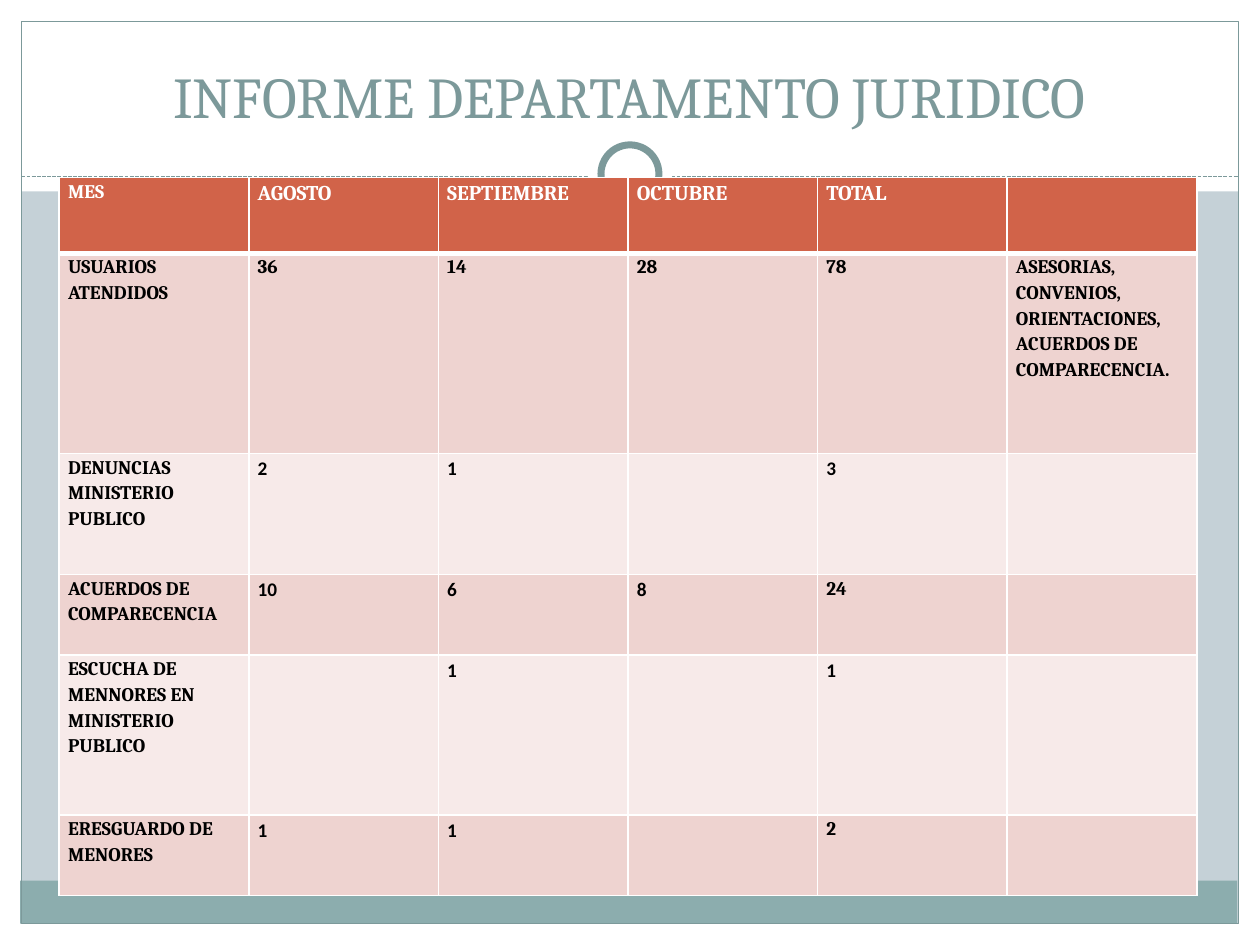
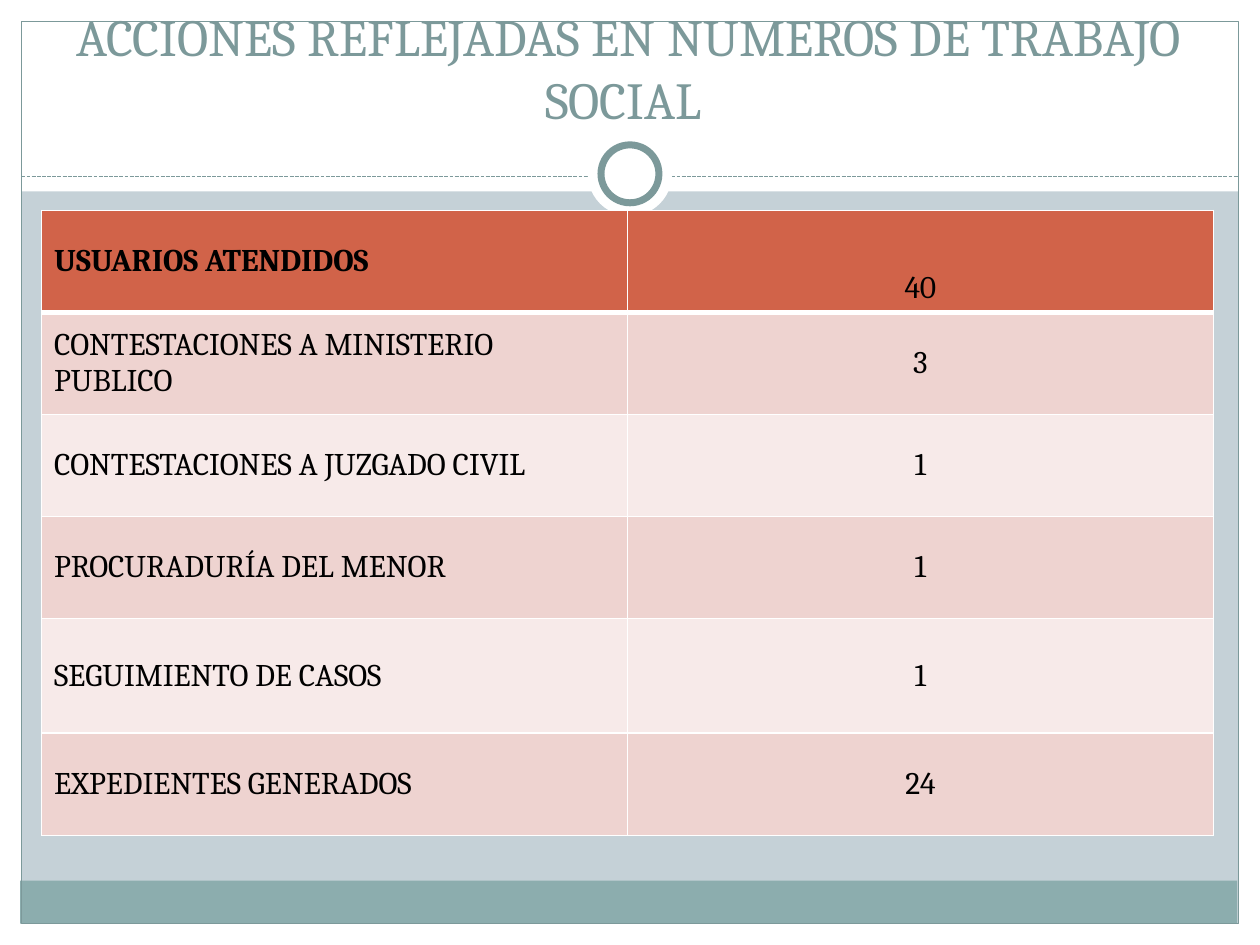
from collections import namedtuple

from lxml.etree import SubElement as add_element
from pptx import Presentation
from pptx.dml.color import RGBColor
from pptx.enum.dml import MSO_LINE
from pptx.enum.shapes import MSO_CONNECTOR, MSO_SHAPE
from pptx.enum.text import MSO_ANCHOR, MSO_AUTO_SIZE, PP_ALIGN
from pptx.oxml.ns import qn
from pptx.util import Inches, Pt

Box = namedtuple("Box", "left top width height")

COLORS = {
    "backdrop": "C5D1D7",
    "white": "FFFFFF",
    "black": "000000",
    "band": "8CADAE",
    "accent": "7C999A",
    "header": "D16349",
    "odd": "EED3D0",
    "even": "F7EAE9",
}
SERIF, SANS = "Cambria", "Calibri"
PAGE = Box(0, 0, 10, 7.5)
TITLE = Box(0.33, 0.25, 9.33, 0.83)
MARGIN = 0.17

LEGAL_ROWS = [
    ["MES", "AGOSTO", "SEPTIEMBRE", "OCTUBRE", "TOTAL", ""],
    ["USUARIOS ATENDIDOS", "36", "14", "28", "78",
     "ASESORIAS, CONVENIOS, ORIENTACIONES, ACUERDOS DE COMPARECENCIA."],
    ["DENUNCIAS MINISTERIO PUBLICO", "2", "1", "", "3", ""],
    ["ACUERDOS DE COMPARECENCIA", "10", "6", "8", "24", ""],
    ["ESCUCHA DE MENNORES EN MINISTERIO PUBLICO", "", "1", "", "1", ""],
    ["ERESGUARDO DE MENORES", "1", "1", "", "2", ""],
]
LEGAL_HEIGHTS = [0.6, 1.59, 0.96, 0.64, 1.27, 0.64]
SERIF_TOTALS = {(3, 4), (5, 4)}

SOCIAL_ROWS = [
    ["USUARIOS ATENDIDOS", "40"],
    ["CONTESTACIONES A MINISTERIO PUBLICO", "3"],
    ["CONTESTACIONES A JUZGADO CIVIL", "1"],
    ["PROCURADURÍA DEL MENOR", "1"],
    ["SEGUIMIENTO DE CASOS", "1"],
    ["EXPEDIENTES GENERADOS", "24"],
]
SOCIAL_HEIGHTS = [0.81, 0.81, 0.81, 0.81, 0.91, 0.81]


def color(name):
    return RGBColor.from_string(COLORS[name])


def set_values(target, values):
    for name, value in values.items():
        setattr(target, name, value)


def write(frame, text, size, ink, font=SERIF, bold=False, **para_format):
    para = frame.paragraphs[0]
    set_values(para, para_format)
    span = para.add_run()
    span.text = text
    set_values(span.font, {"name": font, "size": Pt(size), "bold": bold})
    span.font.color.rgb = color(ink)


def add_figure(page, kind, box, fill=None, line_width=None):
    figure = page.shapes.add_shape(kind, *map(Inches, box))
    figure.shadow.inherit = False
    if fill:
        figure.fill.solid()
        figure.fill.fore_color.rgb = color(fill)
    else:
        figure.fill.background()
    if line_width:
        figure.line.color.rgb = color("accent")
        figure.line.width = Pt(line_width)
    else:
        figure.line.fill.background()


def add_divider(page, left, right, y):
    divider = page.shapes.add_connector(
        MSO_CONNECTOR.STRAIGHT, *map(Inches, (left, y, right, y)))
    set_values(divider.line, {"width": Pt(0.75), "dash_style": MSO_LINE.SQUARE_DOT})
    divider.line.color.rgb = color("accent")
    add_element(divider.element.spPr, qn("a:effectLst"))


def add_frame(page, box):
    page.background.fill.solid()
    page.background.fill.fore_color.rgb = color("backdrop")
    left, top, width, height = box
    right, bottom = left + width, top + height
    inner_width = width - 2 * MARGIN
    for edge in (
        Box(left, bottom - MARGIN, width, MARGIN),
        Box(left, top, width, 1.52),
        Box(left, top, MARGIN, height),
        Box(right - MARGIN, top, MARGIN, height),
    ):
        add_figure(page, MSO_SHAPE.RECTANGLE, edge, "white")
    add_figure(page, MSO_SHAPE.RECTANGLE,
               Box(left + 0.16, bottom - MARGIN - 0.34, inner_width, 0.34), "band")
    add_figure(page, MSO_SHAPE.RECTANGLE,
               Box(left + MARGIN, top + MARGIN, inner_width, height - 2 * MARGIN),
               line_width=0.75)
    add_divider(page, left + MARGIN, right - MARGIN, top + 1.4)
    for size, line_width in ((0.67, None), (0.46, 4)):
        ring = Box(left + (width - size) / 2, top + 1.38 - size / 2, size, size)
        add_figure(page, MSO_SHAPE.OVAL, ring, "white", line_width)


def add_title(page, box, text, size):
    title = page.shapes.title
    set_values(title, {name: Inches(value) for name, value in box._asdict().items()})
    set_values(title.text_frame, {
        "word_wrap": True,
        "auto_size": MSO_AUTO_SIZE.NONE,
        "vertical_anchor": MSO_ANCHOR.BOTTOM,
    })
    write(title.text_frame, text, size, "accent", alignment=PP_ALIGN.CENTER)
    page.shapes.element.append(title.element)


def set_borders(cell, row):
    widths = {"L": 1, "R": 1, "T": 3 if row == 1 else 1, "B": 3 if row == 0 else 1}
    properties = cell._tc.get_or_add_tcPr()
    for side, width in widths.items():
        border = add_element(properties, qn(f"a:ln{side}"), w=str(Pt(width)))
        paint = add_element(border, qn("a:solidFill"))
        add_element(paint, qn("a:srgbClr"), val=COLORS["white"])


def add_grid(page, box, rows, heights, insets, fill_cell):
    grid = page.shapes.add_table(len(rows), len(rows[0]), *map(Inches, box)).table
    for column in grid.columns:
        column.width = Inches(box.width / len(rows[0]))
    for row, (texts, height) in enumerate(zip(rows, heights)):
        grid.rows[row].height = Inches(height)
        fill = "header" if row == 0 else "odd" if row % 2 else "even"
        for column, text in enumerate(texts):
            cell = grid.cell(row, column)
            set_borders(cell, row)
            cell.fill.solid()
            cell.fill.fore_color.rgb = color(fill)
            if text:
                side, end = map(Inches, insets)
                set_values(cell, {"margin_left": side, "margin_right": side,
                                  "margin_top": end, "margin_bottom": end})
                fill_cell(cell, row, column, text)


def fill_legal_cell(cell, row, column, text):
    sans = row > 1 and column > 0 and (row, column) not in SERIF_TOTALS
    write(cell.text_frame, text,
          size=12 if row == 0 and column else 11,
          ink="black" if row else "white",
          font=SANS if sans else SERIF,
          bold=True, line_spacing=1.15)


def fill_social_cell(cell, row, column, text):
    bottom = row == 0 and column == 1
    cell.vertical_anchor = MSO_ANCHOR.BOTTOM if bottom else MSO_ANCHOR.MIDDLE
    write(cell.text_frame, text, 18, "black", bold=row == column == 0,
          alignment=PP_ALIGN.CENTER if column else PP_ALIGN.LEFT)


def add_page(deck, title, title_size):
    page = deck.slides.add_slide(deck.slide_layouts.get_by_name("Title Only"))
    add_frame(page, PAGE)
    add_title(page, TITLE, title, title_size)
    return page


def main():
    deck = Presentation()
    set_values(deck, {"slide_width": Inches(PAGE.width),
                      "slide_height": Inches(PAGE.height)})
    legal = add_page(deck, "INFORME DEPARTAMENTO JURIDICO", 33)
    add_grid(legal, Box(0.47, 1.41, 9.03, 5.7), LEGAL_ROWS, LEGAL_HEIGHTS,
             (0.07, 0), fill_legal_cell)
    social = add_page(deck, "ACCIONES REFLEJADAS EN NUMEROS DE TRABAJO SOCIAL ", 29.7)
    add_grid(social, Box(0.33, 1.67, 9.3, 4.97), SOCIAL_ROWS, SOCIAL_HEIGHTS,
             (0.1, 0.05), fill_social_cell)
    deck.save("out.pptx")


if __name__ == "__main__":
    main()
